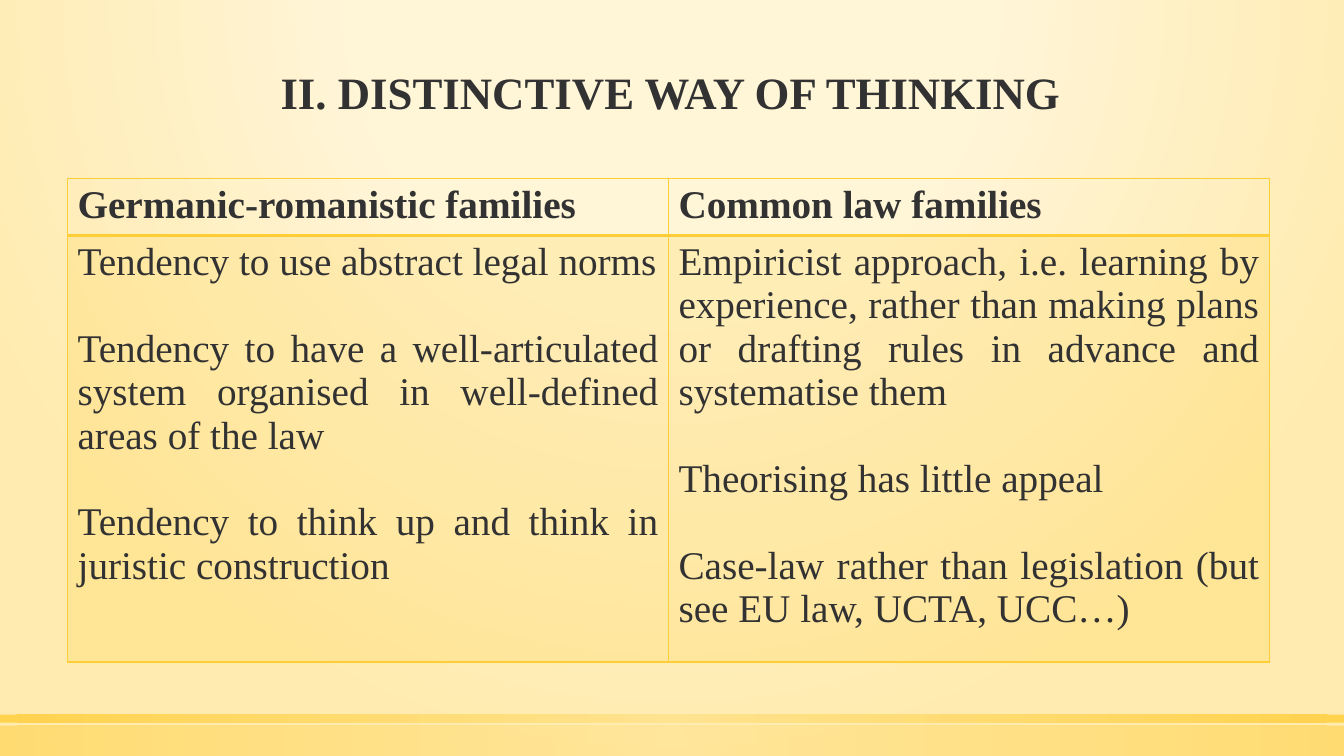
import pptx
import pptx.util
import pptx.dml.color
import pptx.enum.shapes
import pptx.enum.text
import pptx.oxml
import pptx.oxml.ns

Inches, Pt = pptx.util.Inches, pptx.util.Pt
ALIGN = pptx.enum.text.PP_ALIGN

# Content
TITLE = "II. DISTINCTIVE WAY OF THINKING"
HEADS = ["Germanic-romanistic families", "Common law families"]
POINTS = [
    ["Tendency to use abstract legal norms",
     "Tendency to have a well-articulated system organised in "
     "well-defined areas of the law",
     "Tendency to think up and think in juristic construction"],
    ["Empiricist approach, i.e. learning by experience, rather than "
     "making plans or drafting rules in advance and systematise them",
     "Theorising has little appeal",
     "Case-law rather than legislation (but see EU law, UCTA, UCC…)"],
]

# Format
INK, GOLD, PALE = "323232", "FFCD36", "FFE186"
WIDTH, HEIGHT = 13.33, 7.5
BACK = [(0, "FFF5D7", 59), (40, "FFF5D7", 66), (100, "FFEBAF", 100)]
BANDS = [(7.2, 0.3, 50), (7.09, 0.08, 80)]  # top, height, opacity
LEFT, TOP, COL = 0.67, 1.77, 5.96
ROW = 0.41  # least height, rows grow with their text
GAP = 31  # one text line between points
HEAD = {"size": Pt(28), "bold": True}
BODY = {"size": Pt(28), "bold": False}
BIG = {"size": Pt(32), "bold": True}


def color(code):
    return pptx.dml.color.RGBColor.from_string(code)


def xml(text):
    space = pptx.oxml.ns.nsdecls("a")
    return pptx.oxml.parse_xml(text.replace(">", f" {space}>", 1))


def tint(code, alpha):
    return (f'<a:srgbClr val="{code}"><a:alpha val="{alpha * 1000}"/>'
            '</a:srgbClr>')


def swap(fill, root, new):
    """Make a solid fill, then put the new fill element in its place."""
    fill.solid()
    old = root.xpath(".//a:solidFill")[0]
    old.getparent().replace(old, xml(new))


def glow(stops, top, bottom):
    """Circular gradient around the centre line."""
    marks = "".join(f'<a:gs pos="{pos * 1000}">{tint(code, alpha)}</a:gs>'
                    for pos, code, alpha in stops)
    return (f'<a:gradFill><a:gsLst>{marks}</a:gsLst><a:path path="circle">'
            f'<a:fillToRect l="50000" t="{top * 1000}" r="50000" '
            f'b="{bottom * 1000}"/></a:path></a:gradFill>')


def write(frame, lines, look, align, gap=0):
    for num, line in enumerate(lines):
        para = frame.add_paragraph() if num else frame.paragraphs[0]
        para.alignment = align
        if num:
            para.space_before = Pt(gap)
        run = para.add_run()
        run.text = line
        run.font.name = "Times New Roman"
        run.font.color.rgb = color(INK)
        for key, val in look.items():
            setattr(run.font, key, val)


def edge(cell, sides):
    """Draw cell borders; sides maps each side to its points."""
    props = cell._tc.get_or_add_tcPr()
    for num, side in enumerate("LRTB"):
        props.insert(num, xml(
            f'<a:ln{side} w="{Pt(sides[side])}"><a:solidFill>'
            f'{tint(GOLD, 100)}</a:solidFill></a:ln{side}>'))


def main():
    deck = pptx.Presentation()
    deck.slide_width, deck.slide_height = Inches(WIDTH), Inches(HEIGHT)
    slide = deck.slides.add_slide(deck.slide_layouts[6])

    # Background and bottom bands
    swap(slide.background.fill, slide.element, glow(BACK, -80, 180))
    for top, high, alpha in BANDS:
        band = slide.shapes.add_shape(
            pptx.enum.shapes.MSO_SHAPE.RECTANGLE,
            0, Inches(top), Inches(WIDTH), Inches(high))
        band.shadow.inherit = False
        band.line.fill.background()
        stops = [(0, PALE, alpha), (100, GOLD, alpha)]
        swap(band.fill, band._element.spPr, glow(stops, 50, 50))

    # Title
    box = slide.shapes.add_textbox(
        Inches(0.49), Inches(0.51), Inches(12.32), Inches(0.72))
    box.text_frame.word_wrap = True
    write(box.text_frame, [TITLE], BIG, ALIGN.CENTER)
    box.text_frame.vertical_anchor = pptx.enum.text.MSO_ANCHOR.BOTTOM
    box.text_frame.paragraphs[0].line_spacing = 0.9

    # Table
    table = slide.shapes.add_table(
        2, 2, Inches(LEFT), Inches(TOP),
        Inches(2 * COL), Inches(2 * ROW)).table
    table.first_row = table.horz_banding = False
    for num, (head, points) in enumerate(zip(HEADS, POINTS)):
        table.columns[num].width = Inches(COL)
        upper, lower = table.cell(0, num), table.cell(1, num)
        write(upper.text_frame, [head], HEAD, ALIGN.LEFT)
        write(lower.text_frame, points, BODY, ALIGN.JUSTIFY, GAP)
        upper.fill.background()
        swap(lower.fill, lower._tc.tcPr,
             f"<a:solidFill>{tint(GOLD, 20)}</a:solidFill>")
        edge(upper, {"L": 1, "R": 1, "T": 1, "B": 2})
        edge(lower, {"L": 1, "R": 1, "T": 2, "B": 1})

    deck.save("out.pptx")


if __name__ == "__main__":
    main()
